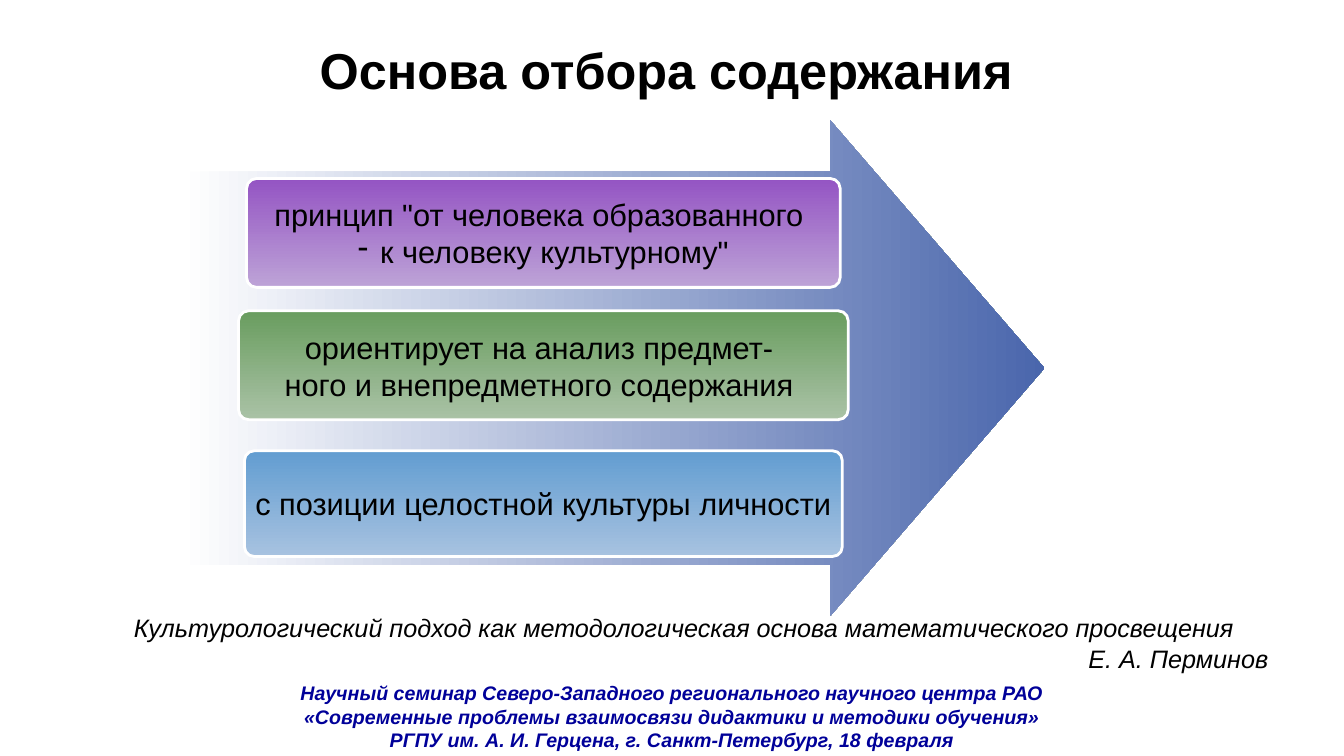
from lxml import etree
from pptx import Presentation
from pptx.dml.color import RGBColor
from pptx.enum.shapes import MSO_SHAPE
from pptx.enum.text import MSO_ANCHOR, PP_ALIGN
from pptx.oxml.ns import qn
from pptx.util import Pt

ARROW, ROUNDED = MSO_SHAPE.RIGHT_ARROW, MSO_SHAPE.ROUNDED_RECTANGLE
MIDDLE, TOP = MSO_ANCHOR.MIDDLE, MSO_ANCHOR.TOP
LEFT, CENTER, RIGHT = PP_ALIGN.LEFT, PP_ALIGN.CENTER, PP_ALIGN.RIGHT

FONT = "Arial"
BLACK = RGBColor(0x00, 0x00, 0x00)
WHITE = RGBColor(0xFF, 0xFF, 0xFF)
NAVY = RGBColor(0x00, 0x00, 0x99)
ARROW_BLUE = RGBColor(0x4A, 0x66, 0xAC)
PURPLE, PALE_PURPLE = RGBColor(0x94, 0x54, 0xC3), RGBColor(0xBD, 0xA3, 0xD7)
GREEN, PALE_GREEN = RGBColor(0x69, 0x9D, 0x5F), RGBColor(0xAA, 0xC2, 0xA6)
BLUE, PALE_BLUE = RGBColor(0x62, 0x9D, 0xD1), RGBColor(0xA7, 0xC2, 0xE0)

# Principles from top to bottom: top and size relative to the arrow, colours, text
PRINCIPLES = [
    (41.5, 424, 77.75, PURPLE, PALE_PURPLE,
     'принцип "от человека образованного \nк человеку культурному"'),
    (136, 435.5, 77.75, GREEN, PALE_GREEN,
     "ориентирует на анализ предмет- \nного и внепредметного содержания "),
    (236, 427, 75.5, BLUE, PALE_BLUE,
     "с позиции целостной культуры личности"),
]


def set_text(tf, text, size, aligns, color=BLACK, bold=False, italic=False):
    tf.text = text
    for p, align in zip(tf.paragraphs, aligns):
        p.alignment = align
        for r in p.runs:
            r.font.name = FONT
            r.font.size = Pt(size)
            r.font.color.rgb = color
            r.font.bold = bold
            r.font.italic = italic


def add_text(slide, box, text, size, aligns, anchor=TOP, **style):
    tf = slide.shapes.add_textbox(*map(Pt, box)).text_frame
    tf.word_wrap = True
    tf.vertical_anchor = anchor
    set_text(tf, text, size, aligns, **style)
    return tf


def add_gradient_shape(slide, kind, box, colors, angle):
    sp = slide.shapes.add_shape(kind, *map(Pt, box))
    sp.shadow.inherit = False
    sp.fill.gradient()
    sp.fill.gradient_angle = angle
    for stop, color in zip(sp.fill.gradient_stops, colors):
        stop.color.rgb = color
    return sp


def add_dash_bullet(p, indent):
    pPr = p._p.get_or_add_pPr()
    pPr.set("marL", str(Pt(indent)))
    pPr.set("indent", str(-Pt(indent)))
    etree.SubElement(pPr, qn("a:buChar")).set("char", "-")


def add_title(slide, box):
    tf = add_text(slide, box, "Основа отбора содержания", 36, [CENTER],
                  MIDDLE, bold=True)
    tf.paragraphs[0].line_spacing = 0.9


def add_principles(slide, box):
    left, top, width, height = box

    # Background arrow
    arrow = add_gradient_shape(slide, ARROW, box, (WHITE, ARROW_BLUE), 0)
    arrow.adjustments[0], arrow.adjustments[1] = 0.793, 0.432
    arrow.line.fill.background()

    # Cards share one vertical axis
    axis = left + 0.42 * width
    for dy, w, h, dark, pale, text in PRINCIPLES:
        card = add_gradient_shape(slide, ROUNDED, (axis - w / 2, top + dy, w, h),
                                  (dark, pale), 270)
        card.adjustments[0] = 0.091
        card.line.color.rgb = WHITE
        card.line.width = Pt(2)
        tf = card.text_frame
        tf.word_wrap = False
        tf.vertical_anchor = MIDDLE
        set_text(tf, text, 22, [CENTER, CENTER])
        if dark == PURPLE:
            add_dash_bullet(tf.paragraphs[1], 16)


def add_caption(slide, box):
    add_text(slide, box,
             "Культурологический подход как методологическая основа "
             "математического просвещения\nЕ. А. Перминов ",
             18, [LEFT, RIGHT], italic=True)


def add_footer(slide, box):
    add_text(slide, box,
             "Научный семинар Северо-Западного регионального научного центра РАО\v"
             "«Современные проблемы взаимосвязи дидактики и методики обучения»\v"
             "РГПУ им. А. И. Герцена, г. Санкт-Петербург, 18 февраля",
             14, [CENTER], color=NAVY, bold=True, italic=True)


def main():
    prs = Presentation()
    prs.slide_width, prs.slide_height = Pt(960), Pt(540)
    slide = prs.slides.add_slide(prs.slide_layouts[6])
    add_title(slide, (62, 0, 828, 104.5))
    add_principles(slide, (129, 86, 617, 354))
    add_footer(slide, (20, 483, 920, 57))
    add_caption(slide, (88.5, 434, 829.5, 51))
    prs.save("out.pptx")


if __name__ == "__main__":
    main()
